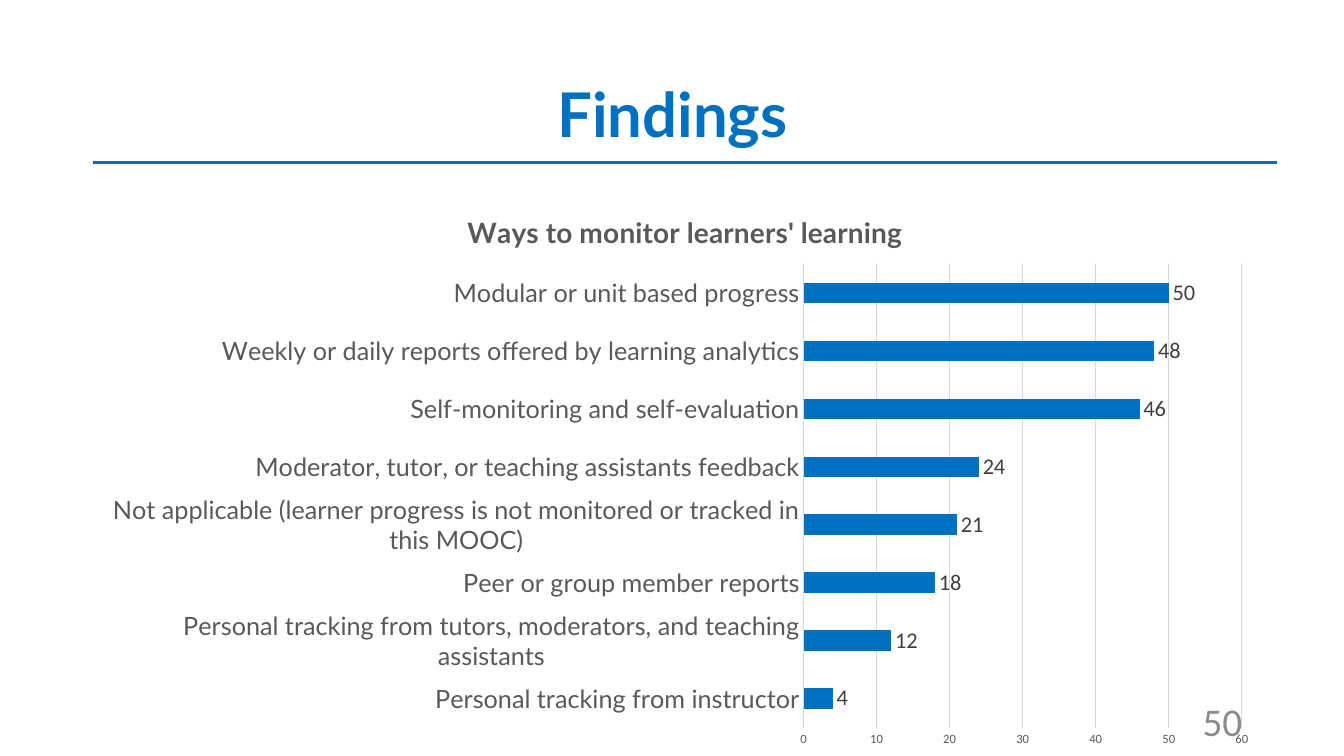
from dataclasses import dataclass
from typing import Any

from pptx import Presentation
from pptx.chart.data import CategoryChartData
from pptx.dml.color import RGBColor
from pptx.enum.chart import XL_CHART_TYPE as ChartType
from pptx.enum.chart import XL_LABEL_POSITION as LabelPosition
from pptx.enum.chart import XL_TICK_MARK as TickMark
from pptx.enum.shapes import MSO_CONNECTOR as Connector
from pptx.enum.text import MSO_ANCHOR as Anchor
from pptx.enum.text import PP_ALIGN as Align
from pptx.oxml import parse_xml
from pptx.oxml.ns import nsdecls, qn
from pptx.util import Inches, Pt

BLUE, DARK_GRAY, GRID_GRAY = "0070C0", "595959", "D9D9D9"
LEFT, CONTENT_WIDTH = 0.92, 11.75


@dataclass(frozen=True)
class MonitoringWay:
    label: str
    responses: int


# Listed from the bottom bar to the top bar
MONITORING_WAYS = [
    MonitoringWay("Personal tracking from instructor", 4),
    MonitoringWay("Personal tracking from tutors, moderators, and teaching assistants", 12),
    MonitoringWay("Peer or group member reports", 18),
    MonitoringWay("Not applicable (learner progress is not monitored or tracked in this MOOC)", 21),
    MonitoringWay("Moderator, tutor, or teaching assistants feedback", 24),
    MonitoringWay("Self-monitoring and self-evaluation", 46),
    MonitoringWay("Weekly or daily reports offered by learning analytics", 48),
    MonitoringWay("Modular or unit based progress", 50),
]

# Plot area as fractions of the chart frame
PLOT_AREA = {"x": 0.6, "y": 0.13, "w": 0.37, "h": 0.82}


def set_values(target: Any, values: dict[str, Any]) -> None:
    for name, value in values.items():
        setattr(target, name, value)


def rgb(color: str) -> RGBColor:
    return RGBColor.from_string(color)


def set_font(font: Any, name: str, size: float, color: str, bold: bool = False) -> None:
    set_values(font, {"name": name, "size": Pt(size), "bold": bold})
    font.color.rgb = rgb(color)


def set_line(line: Any, color: str, width: float) -> None:
    line.color.rgb = rgb(color)
    line.width = Pt(width)


def place(shape: Any, left: float, top: float, width: float, height: float) -> None:
    box = {"left": left, "top": top, "width": width, "height": height}
    set_values(shape, {side: Inches(length) for side, length in box.items()})


def write_text(shape: Any, text: str, align: Align) -> Any:
    set_values(shape.text_frame, {"word_wrap": True, "vertical_anchor": Anchor.MIDDLE})
    paragraph = shape.text_frame.paragraphs[0]
    paragraph.alignment = align
    run = paragraph.add_run()
    run.text = text
    return paragraph


def add_heading(slide: Any) -> None:
    heading = slide.shapes.title
    place(heading, LEFT, 0.44, 11.5, 1.45)
    paragraph = write_text(heading, "Findings", Align.CENTER)
    paragraph.line_spacing = 0.9
    set_font(paragraph.runs[0].font, "Lato", 44, BLUE, bold=True)

    rule_ends = [Inches(n) for n in (LEFT, 1.61, LEFT + CONTENT_WIDTH, 1.61)]
    rule = slide.shapes.add_connector(Connector.STRAIGHT, *rule_ends)
    set_line(rule.line, BLUE, 2)
    rule._element.spPr.append(parse_xml(f"<a:effectLst {nsdecls('a')}/>"))


def add_page_number(slide: Any) -> None:
    page_number = slide.shapes.add_textbox(*[Inches(n) for n in (9.42, 6.95, 3, 0.4)])
    paragraph = write_text(page_number, "50", Align.RIGHT)
    set_font(paragraph.runs[0].font, "Calibri", 28, "8C8C8C")


def fix_plot_area(chart: Any) -> None:
    plot_area = chart._chartSpace.chart.plotArea
    for layout in plot_area.findall(qn("c:layout")):
        plot_area.remove(layout)
    modes = "".join(f'<c:{side}Mode val="edge"/>' for side in "xy")
    sizes = "".join(f'<c:{side} val="{share}"/>' for side, share in PLOT_AREA.items())
    plot_area.insert(0, parse_xml(
        f"<c:layout {nsdecls('c')}><c:manualLayout>"
        f'<c:layoutTarget val="inner"/>{modes}{sizes}'
        "</c:manualLayout></c:layout>"))


def add_monitoring_chart(slide: Any) -> None:
    data = CategoryChartData(number_format="0")
    data.categories = [way.label for way in MONITORING_WAYS]
    data.add_series("Series 1", [way.responses for way in MONITORING_WAYS])
    frame = [Inches(n) for n in (LEFT, 1.89, CONTENT_WIDTH, 5.61)]
    chart = slide.shapes.add_chart(ChartType.BAR_CLUSTERED, *frame, data).chart
    set_values(chart, {"has_legend": False, "has_title": True})
    set_font(chart.font, "Calibri", 10, "000000")
    fix_plot_area(chart)

    # Chart title
    title_frame = chart.chart_title.text_frame
    title_frame.text = "Ways to monitor learners' learning"
    set_font(title_frame.paragraphs[0].runs[0].font, "Lato", 20, DARK_GRAY, bold=True)
    chart.chart_title.include_in_layout = False

    # Axes
    ways_axis, responses_axis = chart.category_axis, chart.value_axis
    for axis, font_name, size in ((ways_axis, "Lato", 18), (responses_axis, "Calibri", 9)):
        set_values(axis, {"major_tick_mark": TickMark.NONE, "minor_tick_mark": TickMark.NONE})
        set_font(axis.tick_labels.font, font_name, size, DARK_GRAY)
    set_line(ways_axis.format.line, GRID_GRAY, 0.75)
    set_values(responses_axis, {"minimum_scale": 0, "maximum_scale": 60, "major_unit": 10,
                                "has_major_gridlines": True})
    set_line(responses_axis.major_gridlines.format.line, GRID_GRAY, 0.75)
    responses_axis.format.line.fill.background()

    # Bars and their values
    plot = chart.plots[0]
    set_values(plot, {"gap_width": 182, "vary_by_categories": False, "has_data_labels": True})
    bar_fill = plot.series[0].format.fill
    bar_fill.solid()
    bar_fill.fore_color.rgb = rgb(BLUE)
    set_values(plot.data_labels, {"show_value": True, "position": LabelPosition.OUTSIDE_END,
                                  "number_format": "0", "number_format_is_linked": False})
    set_font(plot.data_labels.font, "Calibri", 16, "404040")


def main() -> None:
    presentation = Presentation()
    set_values(presentation, {"slide_width": Inches(13.33), "slide_height": Inches(7.5)})
    slide = presentation.slides.add_slide(presentation.slide_layouts.get_by_name("Title Only"))
    add_heading(slide)
    add_page_number(slide)
    add_monitoring_chart(slide)
    presentation.save("out.pptx")


if __name__ == "__main__":
    main()
